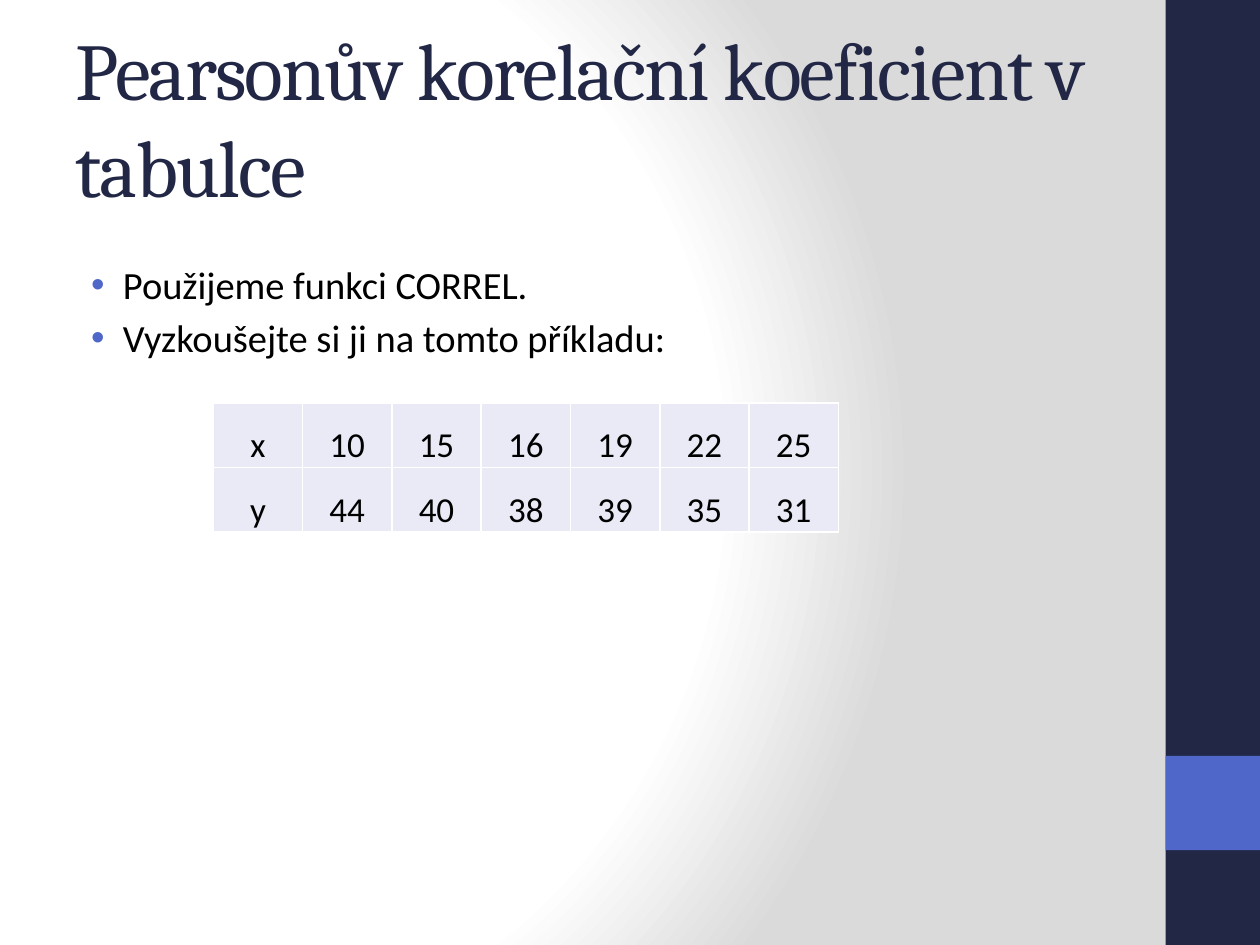
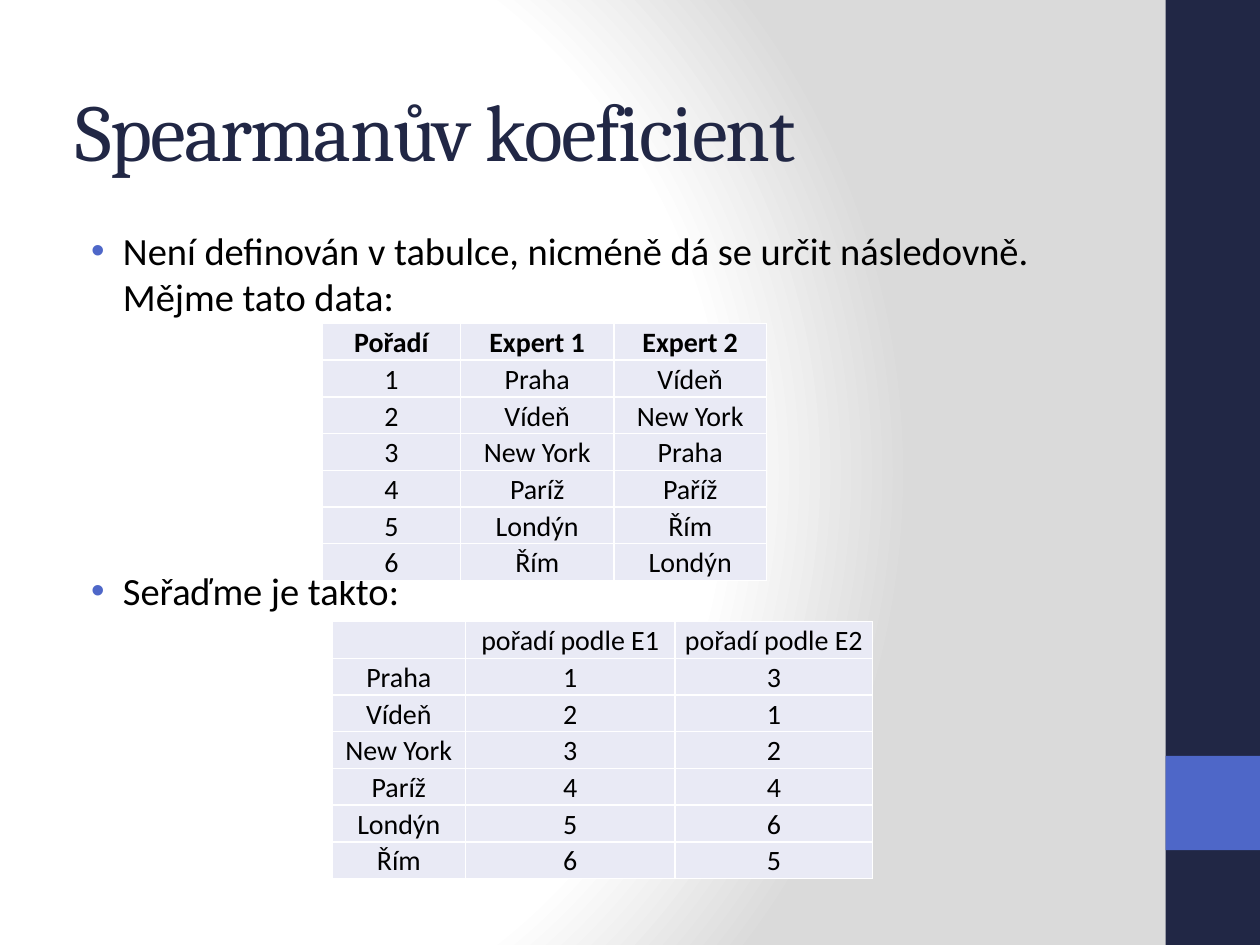
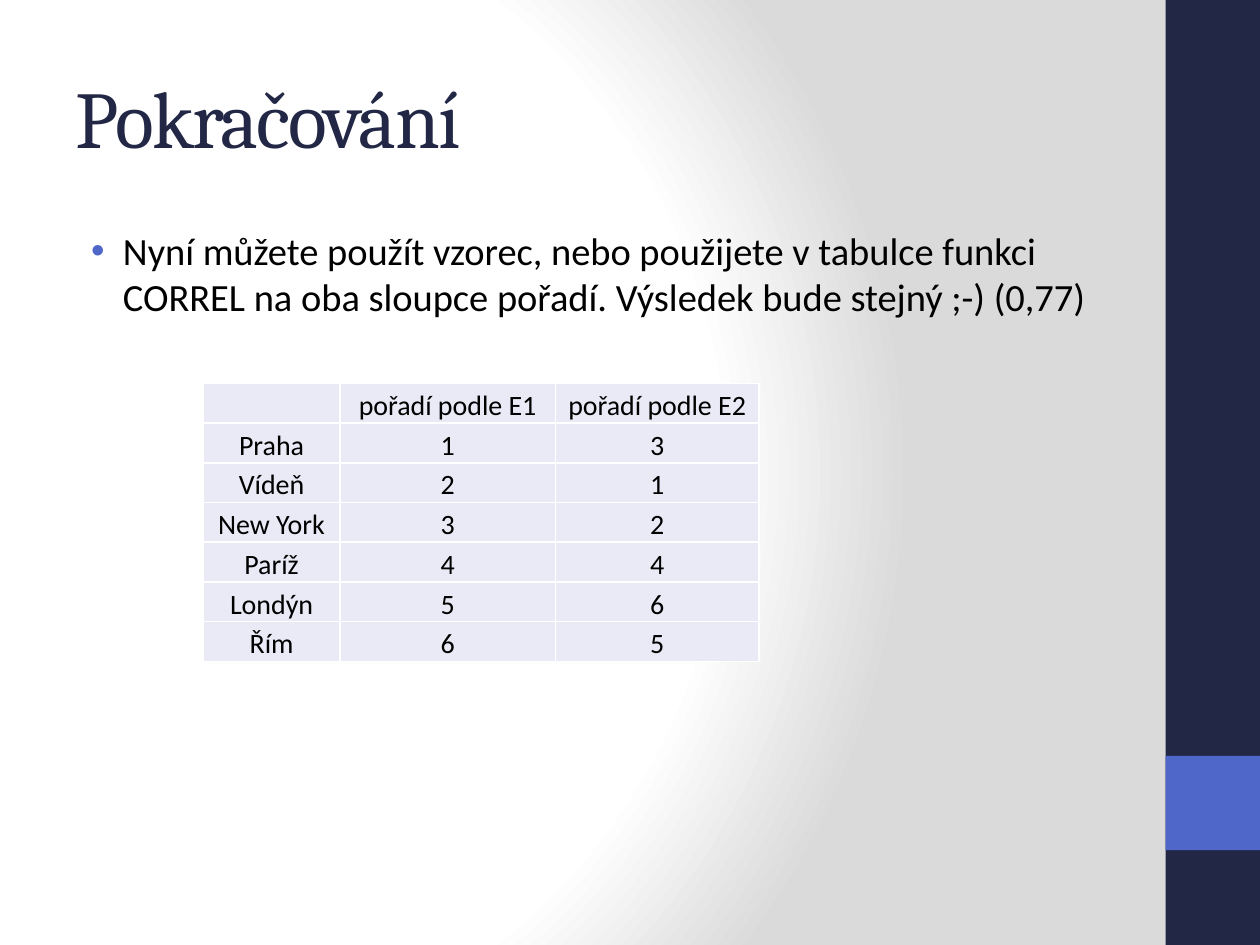
"""Build three slides on the Pearson and Spearman correlation coefficients."""
from dataclasses import dataclass

from pptx import Presentation
from pptx.dml.color import RGBColor as Rgb
from pptx.enum.shapes import MSO_SHAPE as Kind
from pptx.enum.text import MSO_ANCHOR as Anchor, MSO_AUTO_SIZE as Fit, PP_ALIGN as Align
from pptx.oxml import parse_xml
from pptx.oxml.ns import nsdecls
from pptx.util import Cm, Pt


@dataclass(frozen=True)
class Theme:
    navy: str = "212745"
    blue: str = "4E67C8"
    black: str = "000000"
    white: str = "FFFFFF"
    grey: str = "DADADA"
    pale: str = "E9EAF5"
    serif: str = "Cambria"
    sans: str = "Calibri"
    head: int = 46
    body: int = 22
    large: int = 20
    small: int = 16


look = Theme()


def write(para, text, size=look.body, face=look.sans, tint=look.black,
          bold=False, align=Align.LEFT, track=0):
    """Put one formatted run of text in a paragraph."""
    para.alignment = align
    if not text:
        para._p.append(parse_xml(f'<a:endParaRPr {nsdecls("a")} sz="{size * 100}"/>'))
        return
    run = para.add_run()
    run.text = text
    run.font.size, run.font.name, run.font.bold = Pt(size), face, bold
    run.font.color.rgb = Rgb.from_string(tint)
    if track:
        run.font._element.set("spc", str(track * 100))


def grid(slide, left, top, cols, high, rows, size=look.small, bold=False):
    """Add a pale table with white rules; bold applies to its first row."""
    frame = slide.shapes.add_table(len(rows), len(cols), Cm(left), Cm(top),
                                   Cm(sum(cols)), Cm(high * len(rows)))
    table = frame.table
    table.first_row = table.horz_banding = False
    for col, wide in zip(table.columns, cols):
        col.width = Cm(wide)
    for r, row in enumerate(rows):
        table.rows[r].height = Cm(high)
        for c, text in enumerate(row):
            cell = table.cell(r, c)
            cell.margin_left = cell.margin_right = cell.margin_top = Cm(0.03)
            cell.margin_bottom = 0
            cell.vertical_anchor = Anchor.BOTTOM
            for side in "LRTB":
                cell._tc.get_or_add_tcPr().append(parse_xml(
                    f'<a:ln{side} {nsdecls("a")} w="12700"><a:solidFill>'
                    f'<a:srgbClr val="{look.white}"/></a:solidFill></a:ln{side}>'))
            cell.fill.solid()
            cell.fill.fore_color.rgb = Rgb.from_string(look.pale)
            write(cell.text_frame.paragraphs[0], text, size=size,
                  bold=bold and r == 0, align=Align.CENTER)


pairs = [("x", "10", "15", "16", "19", "22", "25"),
         ("y", "44", "40", "38", "39", "35", "31")]
picks = [("Pořadí", "Expert 1", "Expert 2"),
         ("1", "Praha", "Vídeň"),
         ("2", "Vídeň", "New York"),
         ("3", "New York", "Praha"),
         ("4", "Paríž", "Paříž"),
         ("5", "Londýn", "Řím"),
         ("6", "Řím", "Londýn")]
ranks = [("", "pořadí podle E1", "pořadí podle E2"),
         ("Praha", "1", "3"),
         ("Vídeň", "2", "1"),
         ("New York", "3", "2"),
         ("Paríž", "4", "4"),
         ("Londýn", "5", "6"),
         ("Řím", "6", "5")]

deck = [
    dict(title="Pearsonův korelační koeficient v tabulce", tall=3.18,
         top=5.13, high=13.34,
         points=[("Použijeme funkci CORREL.", 3.5),
                 ("Vyzkoušejte si ji na tomto příkladu:", 4)],
         grids=[dict(left=4.3, top=8.12, cols=[1.8] * 7, high=1.3,
                     rows=pairs, size=look.large)]),
    dict(title="Spearmanův koeficient", tall=3.68, top=4.45, high=12.73,
         points=[("Není definován v tabulce, nicméně dá se určit následovně. "
                  "Mějme tato data:", 3.5),
                 ("Seřaďme je takto:", 141.5)],
         grids=[dict(left=6.5, top=6.52, cols=[2.78, 3.1, 3.07], high=0.74,
                     rows=picks, bold=True),
                dict(left=6.7, top=12.53, cols=[2.68, 4.23, 3.98], high=0.74,
                     rows=ranks)]),
    dict(title="Pokračování", tall=3.18, top=4.45, high=13.34,
         points=[("Nyní můžete použít vzorec, nebo použijete v tabulce funkci "
                  "CORREL na oba sloupce pořadí. Výsledek bude stejný ;-) (0,77)", 3.5)],
         grids=[dict(left=4.1, top=7.73, cols=[2.75, 4.35, 4.1], high=0.8,
                     rows=ranks)]),
]
bands = [(0, 19.05, look.navy), (15.24, 1.9, look.blue)]

prs = Presentation()
prs.slide_width, prs.slide_height = Cm(25.4), Cm(19.05)

master = prs.slide_master
master.background.fill.solid()
solid = master.element.xpath("./p:cSld/p:bg/p:bgPr/a:solidFill")[0]
stops = "".join(f'<a:gs pos="{pos * 1000}"><a:srgbClr val="{tint}"/></a:gs>'
                for pos, tint in [(0, look.white), (75, look.white), (100, look.grey)])
solid.getparent().replace(solid, parse_xml(
    f'<a:gradFill {nsdecls("a")} rotWithShape="1"><a:gsLst>{stops}</a:gsLst>'
    '<a:path path="circle"><a:fillToRect l="20000" t="50000" r="100000" b="50000"/>'
    '</a:path></a:gradFill>'))

for page in deck:
    slide = prs.slides.add_slide(prs.slide_layouts[5])
    for top, high, tint in bands:
        band = slide.shapes.add_shape(Kind.RECTANGLE, Cm(23.5), Cm(top), Cm(1.9), Cm(high))
        band.shadow.inherit = False
        band.fill.solid()
        band.fill.fore_color.rgb = Rgb.from_string(tint)
        band.line.fill.background()

    title = slide.shapes.title
    title.left, title.top = Cm(1.27), Cm(0.76)
    title.width, title.height = Cm(21.16), Cm(page["tall"])
    title.text_frame.auto_size = Fit.NONE
    title.text_frame.vertical_anchor = Anchor.MIDDLE
    write(title.text_frame.paragraphs[0], page["title"], size=look.head,
          face=look.serif, tint=look.navy, track=-1)

    body = slide.shapes.add_textbox(Cm(1.27), Cm(page["top"]), Cm(21.16), Cm(page["high"]))
    frame = body.text_frame
    frame.word_wrap = True
    for n, (text, gap) in enumerate(page["points"]):
        para = frame.add_paragraph() if n else frame.paragraphs[0]
        write(para, text)
        para.space_before = Pt(gap)
        props = para._p.get_or_add_pPr()
        props.set("marL", str(int(Cm(0.96))))
        props.set("indent", str(int(Cm(-0.64))))
        for mark in (f'<a:buClr {nsdecls("a")}><a:srgbClr val="{look.blue}"/></a:buClr>',
                     f'<a:buFont {nsdecls("a")} typeface="Arial"/>',
                     f'<a:buChar {nsdecls("a")} char="•"/>'):
            props.append(parse_xml(mark))

    for item in page["grids"]:
        grid(slide, **item)

prs.save("out.pptx")
